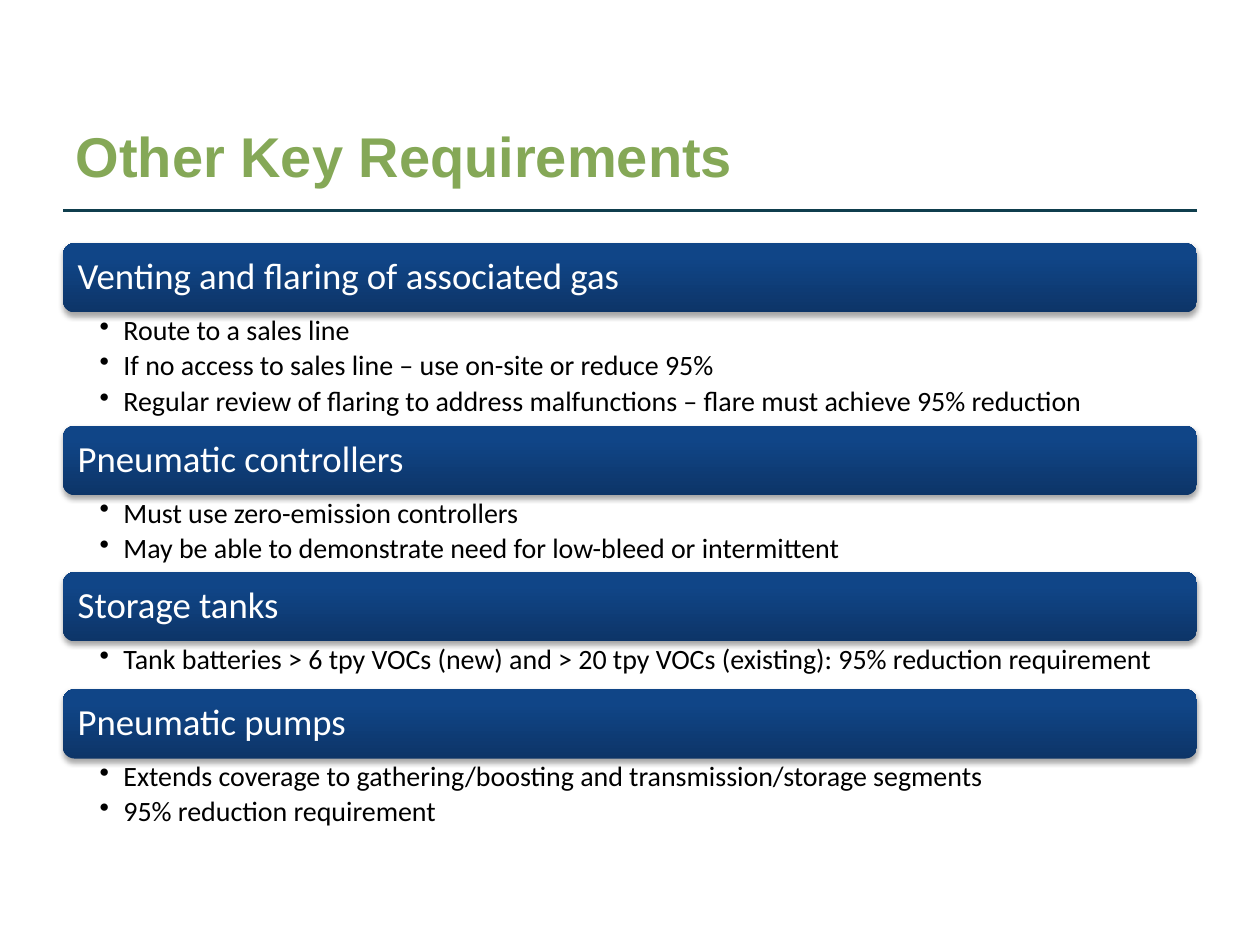
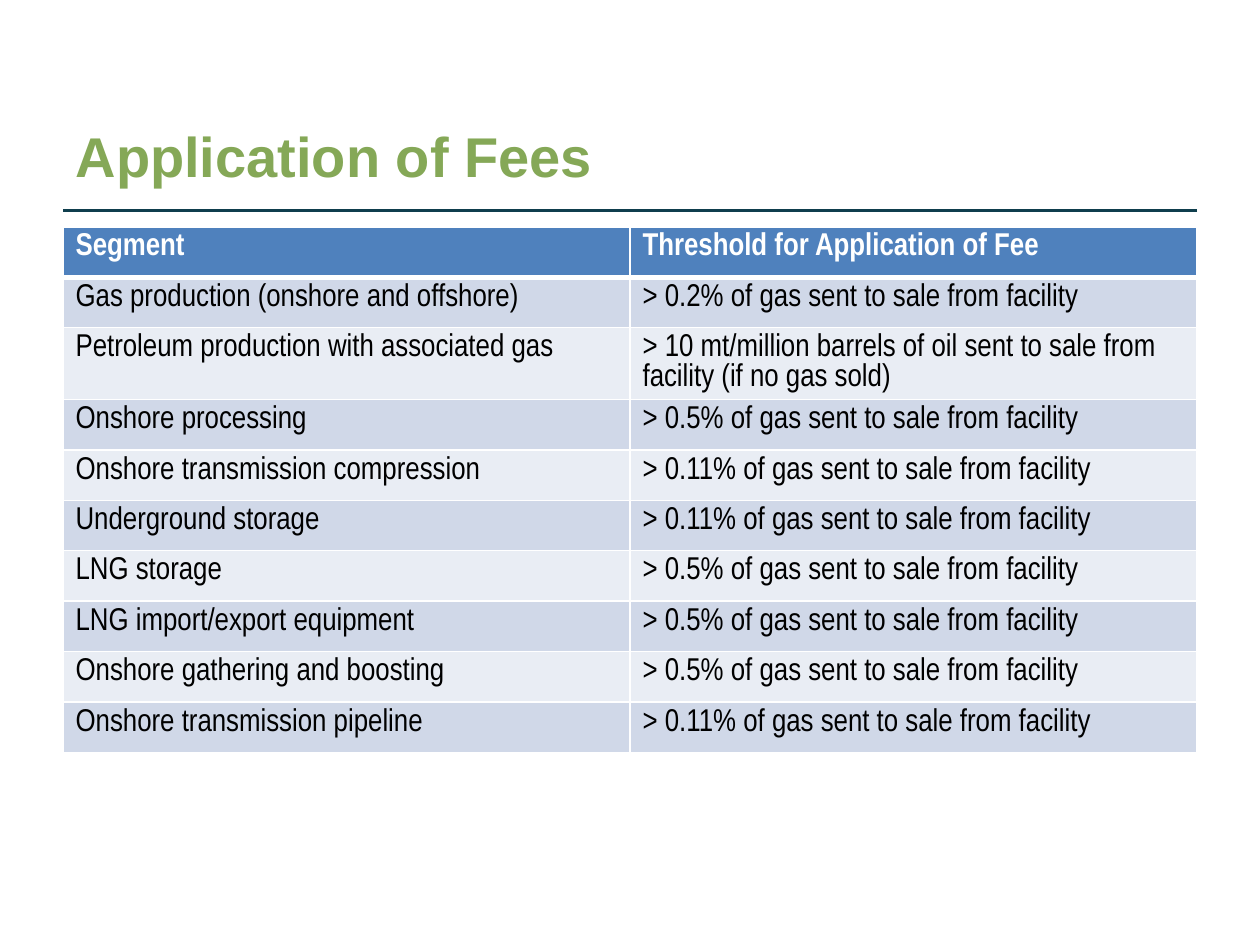
from copy import deepcopy
from dataclasses import dataclass

from lxml import etree
from pptx import Presentation
from pptx.dml.color import RGBColor
from pptx.enum.shapes import MSO_CONNECTOR, MSO_SHAPE
from pptx.enum.text import MSO_ANCHOR, PP_ALIGN
from pptx.oxml.ns import qn
from pptx.util import Inches, Pt

LEFT = PP_ALIGN.LEFT
MIDDLE = MSO_ANCHOR.MIDDLE
BOTTOM = MSO_ANCHOR.BOTTOM
ROUNDED = MSO_SHAPE.ROUNDED_RECTANGLE
STRAIGHT = MSO_CONNECTOR.STRAIGHT


@dataclass(frozen=True)
class Theme:
    title: str = "85A857"
    rule: str = "0F3E4D"
    white: str = "FFFFFF"
    black: str = "000000"
    band: tuple = ((0, "0D3568"), (0.8, "104587"), (1, "0E458A"))
    header: str = "4F81BD"
    rows: tuple = ("D0D8E8", "E9EDF4")
    title_font: str = "Arial"
    topic_font: str = "Calibri"
    table_font: str = "Arial Narrow"
    title_size: int = 32
    topic_size: int = 21
    point_size: int = 16
    table_size: int = 18


theme = Theme()
MARGIN, WIDTH = 0.5, 9


def write(paragraph, text, *, font, size, color, bold=False, spacing=None, after=None):
    """Fill a paragraph with one formatted run."""
    paragraph.alignment = LEFT
    if spacing:
        paragraph.line_spacing = spacing
    if after:
        paragraph.space_after = Pt(after)
    run = paragraph.add_run()
    run.text = text
    run.font.name = font
    run.font.size = Pt(size)
    run.font.bold = bold
    run.font.color.rgb = RGBColor.from_string(color)


def add_xml(parent, tag, **attributes):
    """Append a drawing element with the given attributes."""
    return etree.SubElement(parent, qn(tag), {k: str(v) for k, v in attributes.items()})


prs = Presentation()
prs.slide_width = Inches(10)
prs.slide_height = Inches(7.5)

# Shared layout: title position
layout = prs.slide_layouts[5]
layout_title = layout.placeholders[0]
layout_title.left, layout_title.top = Inches(MARGIN), Inches(0.3)
layout_title.width, layout_title.height = Inches(WIDTH), Inches(1.25)
layout_title.text_frame.vertical_anchor = BOTTOM

# Slides with their titles
slides = []
for heading in ("Other Key Requirements", "Application of Fees"):
    slide = prs.slides.add_slide(layout)
    write(slide.shapes.title.text_frame.paragraphs[0], heading, font=theme.title_font,
          size=theme.title_size, color=theme.title, bold=True)
    slides.append(slide)
requirements, fees = slides

# Shared layout: rule under the title, moved from the slide to the layout
rule = requirements.shapes.add_connector(
    STRAIGHT, Inches(MARGIN + WIDTH), Inches(1.67), Inches(MARGIN), Inches(1.67))
rule.line.color.rgb = RGBColor.from_string(theme.rule)
rule.line.width = Pt(1.5)
add_xml(rule._element.spPr, "a:effectLst")
layout.shapes._spTree.append(rule._element)

# Slide 1: topic bands, each followed by its points
topics = [
    ("Venting and flaring of associated gas", 0.9, [
        "Route to a sales line",
        "If no access to sales line – use on-site or reduce 95%",
        "Regular review of flaring to address malfunctions – flare must achieve 95% reduction",
    ]),
    ("Pneumatic controllers", 0.61, [
        "Must use zero-emission controllers",
        "May be able to demonstrate need for low-bleed or intermittent",
    ]),
    ("Storage tanks", 0.38, [
        "Tank batteries > 6 tpy VOCs (new) and > 20 tpy VOCs (existing): 95% reduction requirement",
    ]),
    ("Pneumatic pumps", 0.61, [
        "Extends coverage to gathering/boosting and transmission/storage segments",
        "95% reduction requirement",
    ]),
]
BAND_HEIGHT = 0.55
top = 1.93
for topic, points_height, points in topics:
    band = requirements.shapes.add_shape(
        ROUNDED, Inches(MARGIN), Inches(top), Inches(WIDTH), Inches(BAND_HEIGHT))
    band.line.fill.background()

    # Vertical gradient with three stops
    band.fill.gradient()
    band.fill.gradient_angle = 90
    stops = band._element.spPr.find(".//" + qn("a:gsLst"))
    stops.append(deepcopy(stops[-1]))
    for stop, (position, color) in zip(band.fill.gradient_stops, theme.band):
        stop.position = position
        stop.color.rgb = RGBColor.from_string(color)

    # Soft shadow below the band
    band.shadow.inherit = False
    effects = band._element.spPr.find(qn("a:effectLst"))
    shadow = add_xml(effects, "a:outerShdw", blurRad=Pt(3.1), dist=Pt(1.8),
                     dir=5400000, rotWithShape=0)
    shade = add_xml(shadow, "a:srgbClr", val=theme.black)
    add_xml(shade, "a:alpha", val=35000)

    frame = band.text_frame
    frame.word_wrap = True
    frame.vertical_anchor = MIDDLE
    frame.margin_left = frame.margin_right = Inches(0.09)
    write(frame.paragraphs[0], topic, font=theme.topic_font, size=theme.topic_size,
          color=theme.white, spacing=0.9)
    top += BAND_HEIGHT

    # Bulleted points
    details = requirements.shapes.add_textbox(
        Inches(MARGIN), Inches(top), Inches(WIDTH), Inches(points_height)).text_frame
    details.word_wrap = True
    details.margin_left, details.margin_right = Inches(0.29), Inches(0.16)
    details.margin_top = details.margin_bottom = Inches(0.03)
    for index, point in enumerate(points):
        paragraph = details.add_paragraph() if index else details.paragraphs[0]
        paragraph.level = 1
        properties = paragraph._p.get_or_add_pPr()
        properties.set("marL", str(Inches(0.19)))
        properties.set("indent", str(Inches(-0.19)))
        add_xml(properties, "a:buChar", char="•")
        write(paragraph, point, font=theme.topic_font, size=theme.point_size,
              color=theme.black, spacing=0.9, after=3)
    top += points_height

# Slide 2: thresholds by segment
SALE = "of gas sent to sale from facility"
thresholds = [
    ("Segment", "Threshold for Application of Fee"),
    ("Gas production (onshore and offshore)", f"> 0.2% {SALE}"),
    ("Petroleum production with associated gas",
     "> 10 mt/million barrels of oil sent to sale from facility (if no gas sold)"),
    ("Onshore processing", f"> 0.5% {SALE}"),
    ("Onshore transmission compression", f"> 0.11% {SALE}"),
    ("Underground storage", f"> 0.11% {SALE}"),
    ("LNG storage", f"> 0.5% {SALE}"),
    ("LNG import/export equipment", f"> 0.5% {SALE}"),
    ("Onshore gathering and boosting", f"> 0.5% {SALE}"),
    ("Onshore transmission pipeline", f"> 0.11% {SALE}"),
]
ROW_HEIGHT, TALL_ROW = 0.4, 2
table = fees.shapes.add_table(
    len(thresholds), 2, Inches(MARGIN), Inches(1.8), Inches(WIDTH),
    Inches(ROW_HEIGHT * len(thresholds))).table
table.rows[TALL_ROW].height = Inches(0.57)
for r, entries in enumerate(thresholds):
    is_header = r == 0
    fill = theme.header if is_header else theme.rows[(r - 1) % 2]
    # The line between the header and the body is heavier
    borders = {"a:lnL": 1, "a:lnR": 1, "a:lnT": 3 if r == 1 else 1, "a:lnB": 3 if is_header else 1}
    for c, entry in enumerate(entries):
        cell = table.cell(r, c)
        for side, weight in borders.items():
            border = add_xml(cell._tc.get_or_add_tcPr(), side, w=Pt(weight))
            add_xml(add_xml(border, "a:solidFill"), "a:srgbClr", val=theme.white)
        cell.fill.solid()
        cell.fill.fore_color.rgb = RGBColor.from_string(fill)
        write(cell.text_frame.paragraphs[0], entry, font=theme.table_font,
              size=theme.table_size, bold=is_header,
              color=theme.white if is_header else theme.black)

prs.save("out.pptx")
